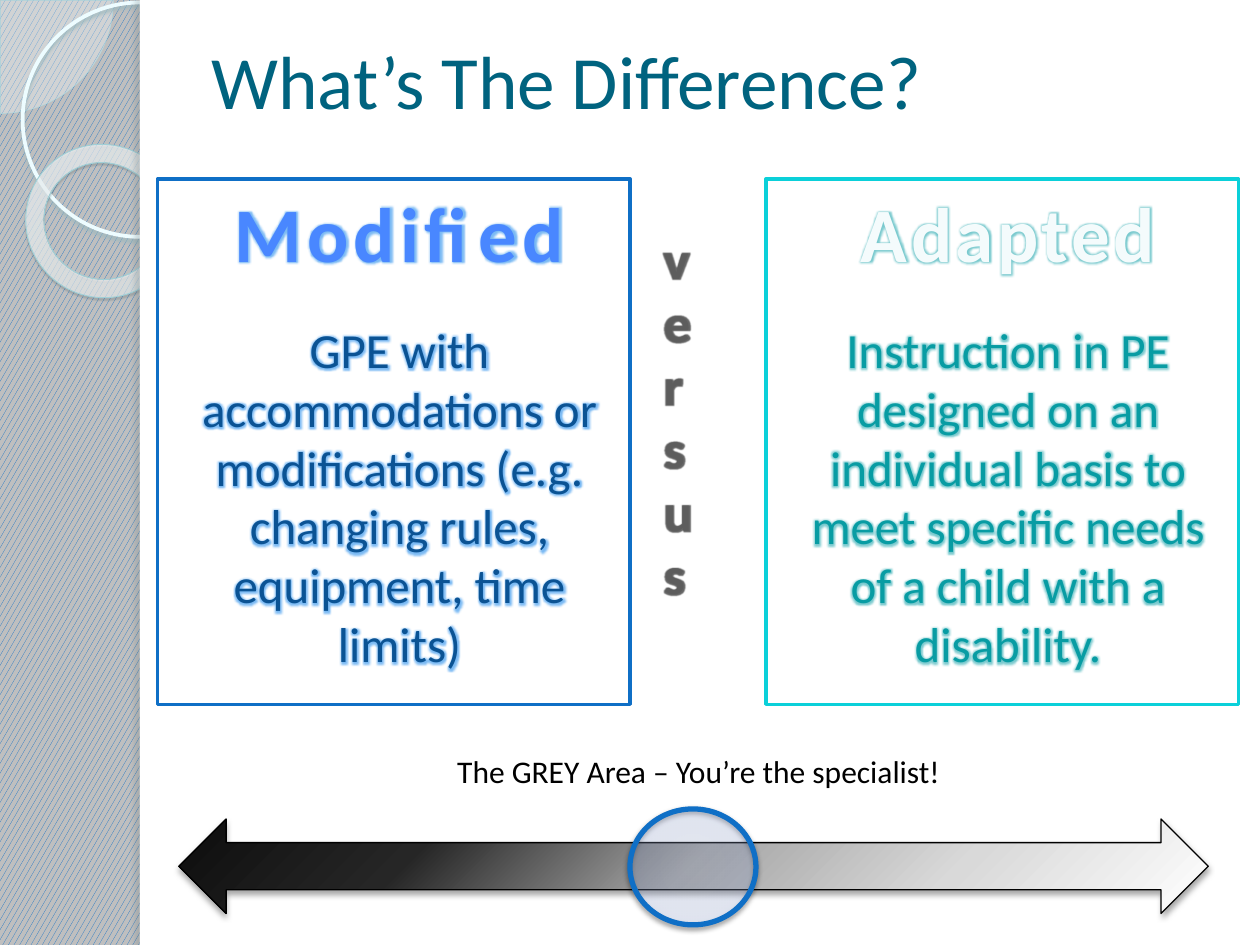
"""Build a slide that sets modified against adapted physical education."""
from pptx import Presentation
from pptx.dml.color import RGBColor
from pptx.enum.dml import MSO_PATTERN
from pptx.enum.shapes import MSO_SHAPE
from pptx.enum.text import MSO_ANCHOR, MSO_AUTO_SIZE, PP_ALIGN
from pptx.oxml import parse_xml
from pptx.oxml.ns import nsdecls, qn
from pptx.util import Inches, Pt

FONT = "Calibri"
LEFT, CENTER = PP_ALIGN.LEFT, PP_ALIGN.CENTER
TOP, MIDDLE = MSO_ANCHOR.TOP, MSO_ANCHOR.MIDDLE
GROW = MSO_AUTO_SIZE.SHAPE_TO_FIT_TEXT
RECT, OVAL = MSO_SHAPE.RECTANGLE, MSO_SHAPE.OVAL
PIE, DONUT = MSO_SHAPE.PIE, MSO_SHAPE.DONUT
ARROW = MSO_SHAPE.LEFT_RIGHT_ARROW
CONFETTI = MSO_PATTERN.LARGE_CONFETTI

rgb = RGBColor.from_string
WHITE, BLACK = rgb("FFFFFF"), rgb("000000")
BLUE, CYAN, GREY = rgb("0F6FC6"), rgb("0BD0D9"), rgb("BFBFBF")
TITLE, NAVY, TEAL = rgb("00637F"), rgb("0B5394"), rgb("089CA3")
ICE, PALE, RING = rgb("F8FEFF"), rgb("AFDBE2"), rgb("EDFCFF")
RIM, MIST = rgb("A1CFD6"), rgb("9CB9BE")
SLATE, EDGE = rgb("4B5E61"), rgb("6C7A7C")
AQUA, FOAM, SNOW = rgb("00DAE4"), rgb("F4FBFC"), rgb("F4F5FA")
BLUE_GLOW, TEAL_GLOW, DARK_GLOW = rgb("4FA3F0"), rgb("4DB8BE"), rgb("333333")
DONUT_FADE = [(0, rgb("F9FEFF"), 70), (70, rgb("FDFFFF"), 55),
              (100, rgb("9EF2FF"), 60)]
ARROW_FADE = [(0, rgb("0D0D0D")), (24, rgb("262626")), (50, rgb("A6A6A6")),
              (74, rgb("D9D9D9")), (100, WHITE)]
SPOT_FADE = [(0, rgb("C2D3FF"), 20), (50, rgb("B4C9FF"), 20),
             (97, rgb("9CB9FF"), 20), (100, rgb("95B4FF"), 20)]
HEAD_FADE = [(10, rgb("4987FF")), (75, rgb("00539E"))]
WORD_FADE = [(0, rgb("555555")), (49, rgb("5D5D5D")), (50, BLACK), (100, BLACK)]


def node(body):
    """Parse drawing markup whose first tag lacks its namespace."""
    tag, rest = body.split(">", 1)
    slash = "/" if tag.endswith("/") else ""
    return parse_xml(f"{tag.rstrip('/')} {nsdecls('a')}{slash}>{rest}")


def tint(color, alpha=100):
    """Return colour markup with its opacity in percent."""
    return f'<a:srgbClr val="{color}"><a:alpha val="{alpha * 1000}"/></a:srgbClr>'


def paint(fill, focus=None):
    """Return a solid fill, or a gradient from a list of stops."""
    if isinstance(fill, RGBColor):
        fill = (fill,)
    if isinstance(fill, tuple):
        return node(f"<a:solidFill>{tint(*fill)}</a:solidFill>")
    stops = "".join(f'<a:gs pos="{pos * 1000}">{tint(*color)}</a:gs>'
                    for pos, *color in fill)
    way = '<a:lin ang="5400000" scaled="0"/>'
    if focus:
        sides = " ".join(f'{side}="{val * 1000}"' for side, val in zip("ltrb", focus))
        way = f'<a:path path="circle"><a:fillToRect {sides}/></a:path>'
    return node(f"<a:gradFill><a:gsLst>{stops}</a:gsLst>{way}</a:gradFill>")


def swap(props, fill, focus=None):
    """Put a fill in place of the empty one and return it."""
    new = paint(fill, focus)
    props.replace(props.find(qn("a:noFill")), new)
    return new


def draw(slide, kind, box, fill=None, focus=None, line=None, shade=None,
         adjust=(), turn=0):
    """Add a preset shape with its fill, line and shadow."""
    shape = slide.shapes.add_shape(kind, *map(Inches, box))
    shape.rotation = turn
    for index, value in enumerate(adjust):
        shape.adjustments[index] = value
    props = shape._element.spPr
    shape.fill.background()
    if fill:
        swap(props, fill, focus)
    if line:
        shape.line.color.rgb, shape.line.width = line[0], Pt(line[1])
    else:
        shape.line.fill.background()
    shape.shadow.inherit = False
    if shade:
        color, alpha, blur, dist, angle = shade
        props.find(qn("a:effectLst")).append(node(
            f'<a:outerShdw blurRad="{Pt(blur)}" dist="{Pt(dist)}" '
            f'dir="{angle * 60000}" algn="ctr" rotWithShape="0">'
            f"{tint(color, alpha)}</a:outerShdw>"))
    return shape


def write(para, text, size=18, fill=BLACK, bold=False, align=LEFT, before=0,
          indent=0, space=0, edge=None, glow=None):
    """Set a paragraph's text and format."""
    para.alignment, para.space_before = align, Pt(before)
    marks = para._p.get_or_add_pPr()
    marks.set("marL", str(Inches(indent)))
    marks.set("indent", "0")
    run = para.add_run()
    run.text = text
    font = run.font
    font.name, font.size, font.bold = FONT, Pt(size), bold
    font.fill.background()
    props = run._r.get_or_add_rPr()
    new = swap(props, fill)
    if space:
        props.set("spc", str(space * 100))
    if glow:
        new.addnext(node(f'<a:effectLst><a:glow rad="{Pt(3.6)}">{tint(glow, 75)}'
                         "</a:glow></a:effectLst>"))
    if edge:
        line = node(f'<a:ln w="{Pt(edge[1])}"></a:ln>')
        line.append(paint(edge[0]))
        props.insert(0, line)


def label(slide, box, text, anchor=TOP, grow=False, **style):
    """Add a wrapped text box of one paragraph."""
    shape = slide.shapes.add_textbox(*map(Inches, box))
    frame = shape.text_frame
    frame.word_wrap, frame.vertical_anchor = True, anchor
    if grow:
        frame.auto_size = GROW
    write(frame.paragraphs[0], text, **style)
    return shape


def card(slide, left, color, head, body, ink, glow, **style):
    """Add a framed card with a heading and a body."""
    shape = draw(slide, RECT, (left, 1.42, 3.75, 4.17), WHITE, line=(color, 2))
    frame = shape.text_frame
    frame.word_wrap, frame.vertical_anchor = True, TOP
    base = dict(align=CENTER, indent=0.09, glow=glow)
    write(frame.paragraphs[0], head, size=44, bold=True, before=6, **base, **style)
    write(frame.add_paragraph(), body, size=28, fill=ink, before=24, **base)


def border(slide):
    """Draw the side band's rings and the white page."""
    back = slide.background.fill
    back.patterned()
    back.pattern = CONFETTI
    back.fore_color.rgb, back.back_color.rgb = BLUE, GREY
    draw(slide, PIE, (-0.89, -0.89, 1.79, 1.79), (ICE, 33), line=(PALE, 0.25),
         adjust=(0, 54.02))
    draw(slide, OVAL, (0.18, 0.02, 1.86, 1.86), line=(RING, 2.15),
         shade=(MIST, 85, 2, 2, 90))
    draw(slide, DONUT, (0.2, 1.15, 1.23, 1.21), DONUT_FADE, (-408, -50, 508, 150),
         (RIM, 0.58), (SLATE, 35, 1, 1.2, 75), (0.12,), 38.6)
    draw(slide, RECT, (1.11, 0, 8.89, 7.5), WHITE)
    draw(slide, RECT, (1.11, 0, 0.08, 7.5), WHITE, shade=(EDGE, 25, 3, 3, 180))


def main():
    """Build and save the slide."""
    deck = Presentation()
    deck.slide_width, deck.slide_height = Inches(10), Inches(7.5)
    slide = deck.slides.add_slide(deck.slide_layouts[6])
    border(slide)
    card(slide, 1.25, BLUE, "Modified",
         "GPE with accommodations or modifications (e.g. changing rules, "
         "equipment, time limits)", NAVY, BLUE_GLOW,
         fill=HEAD_FADE, space=3, edge=(SNOW, 0.9))
    card(slide, 6.08, CYAN, "Adapted",
         "Instruction in PE designed on an individual basis to meet specific "
         "needs of a child with a disability.", TEAL, TEAL_GLOW,
         fill=(AQUA, 50), space=2, edge=(FOAM, 2.3))
    word = label(slide, (5.17, 1.75, 0.77, 3.5), "versus", grow=True, size=30,
                 fill=WORD_FADE, bold=True, edge=(WHITE, 1.4), glow=DARK_GLOW)
    word.text_frame._txBody.bodyPr.set("vert", "wordArtVert")
    label(slide, (1.58, 0.17, 8.2, 0.92), "What’s The Difference?", MIDDLE,
          size=43, fill=TITLE)
    draw(slide, ARROW, (1.42, 6.5, 8.17, 0.75), ARROW_FADE, (0, 0, 100, 100),
         (BLACK, 0.75), (BLACK, 35, 3.1, 1.8, 90))
    label(slide, (2.92, 5.92, 5.25, 0.4), "The GREY Area – You’re the specialist!",
          grow=True, align=CENTER)
    draw(slide, OVAL, (5, 6.42, 1, 0.92), SPOT_FADE, (50, 50, 50, 50),
         (BLUE, 3), (BLACK, 38, 3.1, 1.6, 90))
    deck.save("out.pptx")


if __name__ == "__main__":
    main()
